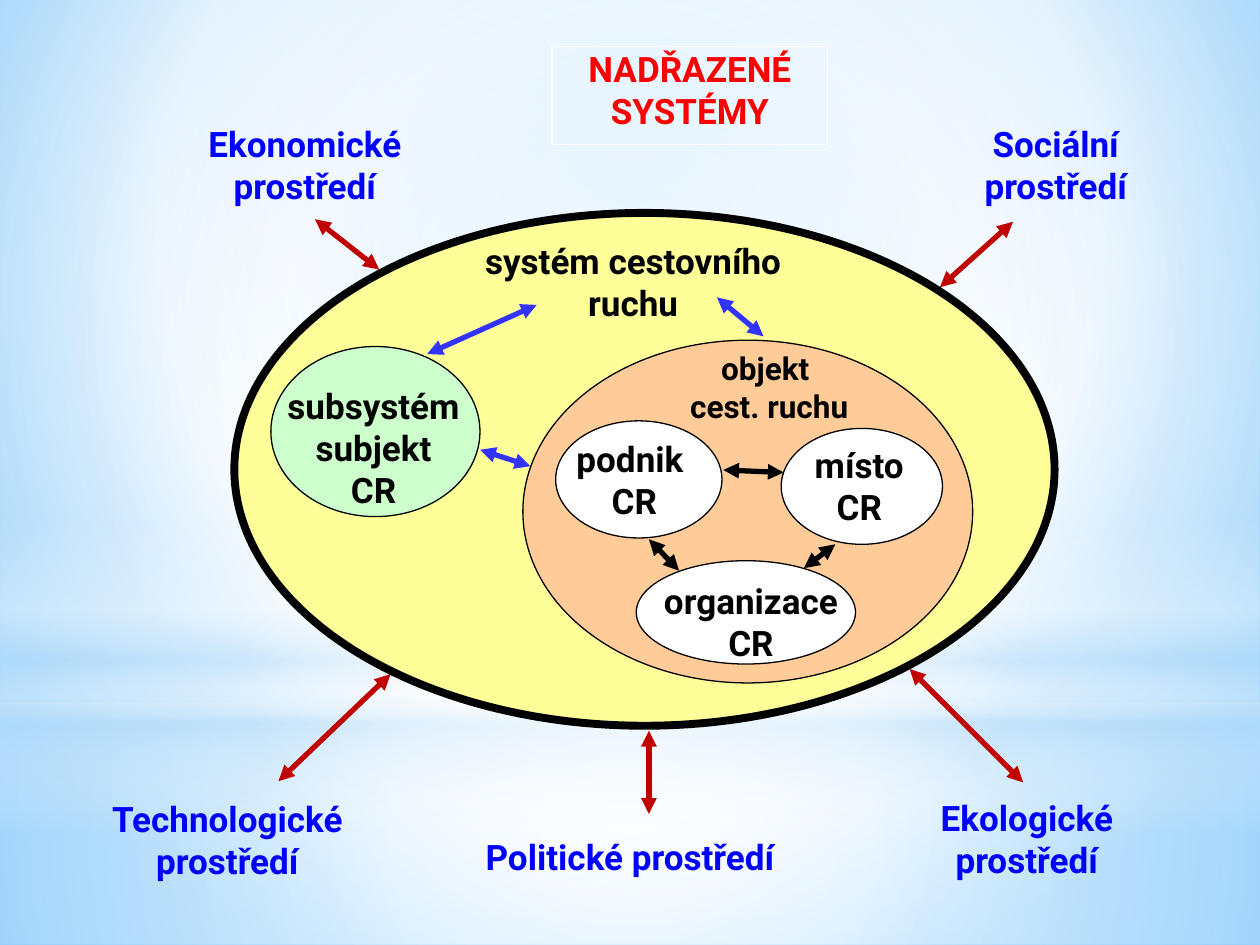
from lxml import etree
from pptx import Presentation, util as u
from pptx.dml.color import RGBColor
from pptx.enum import shapes, text
from pptx.oxml import parse_xml
from pptx.oxml.ns import nsdecls, qn

THEME = {
    "font": "Roboto", "big": 20, "small": 18,
    "title": "FF0000", "env": "0000FF", "ink": "000000", "white": "FFFFFF",
    "outer": "C00000", "inner": "3333FF", "haze": "B4DCFA",
    "system": "FFFF99", "subject": "CCFFCC", "object": "FFCC99",
    "sky": "9ED5FF", "deep": "5BB9FF",
}
RECT, OVAL = shapes.MSO_SHAPE.RECTANGLE, shapes.MSO_SHAPE.OVAL
MID = (50, 50, 50, 50)

# gradient stops: position %, colour, opacity %; then focus rectangle or angle
SKY = ([(0, "sky", 100), (60, "white", 100), (100, "deep", 100)], (20, 10, 20, 60))
LAYERS = [
    (RECT, (0, 5.58, 10, 1.92),
     [(0, "white", 91), (37, "white", 76), (100, "haze", 79)], MID),
    (RECT, (0, 0, 10, 5.58),
     [(0, "white", 89), (48, "white", 62), (100, "haze", 79)], MID),
    (RECT, (0, 4.12, 10, 2.5),
     [(0, "white", 0), (29, "white", 30), (45, "haze", 40),
      (55, "white", 26), (65, "haze", 60), (100, "white", 0)], 90),
    (OVAL, (0, 1.75, 10, 5.58), [(0, "white", 100), (56, "white", 0)], MID),
]

# text, box, insets, colour, size
TITLE = ("NADŘAZENÉ SYSTÉMY", (4.38, 0.37, 2.19, 0.78), (0, 0.01), "title", "big")
LABELS = [
    ("Technologické prostředí", (0.58, 6.28, 2.45, 0.78), (0.1, 0.05), "env", "big"),
    ("Politické prostředí", (3.59, 6.55, 2.82, 0.48), (0, 0.08), "env", "big"),
    ("Ekologické prostředí", (7.13, 6.27, 2.04, 0.78), (0.1, 0.05), "env", "big"),
    ("Sociální prostředí", (7.46, 0.97, 1.84, 0.75), (0, 0), "env", "big"),
    ("Ekonomické prostředí", (1.36, 0.97, 2.12, 0.72), (0, 0), "env", "big"),
    ("systém cestovního ruchu", (3.7, 1.84, 2.65, 0.76), (0, 0.06), "ink", "big"),
    ("subsystém subjekt\nCR", (2.16, 3.04, 1.61, 0.98), (0, 0.01), "ink", "big"),
    ("místo\nCR", (6.32, 3.51, 1, 0.52), (0.02, 0.01), "ink", "big"),
    ("podnik\n CR", (4.41, 3.47, 1.18, 0.51), (0.1, 0), "ink", "big"),
    ("objekt \ncest. ruchu", (5.32, 2.77, 1.57, 0.57), (0, 0), "ink", "small"),
    ("organizace CR", (5.15, 4.55, 1.62, 0.67), (0.02, 0.05), "ink", "big"),
]

# box, fill, line width
SYSTEM = [((1.86, 1.69, 6.51, 4.07), "system", 4.5)]
PARTS = [
    ((2.15, 2.75, 1.66, 1.35), "subject", 0.75),
    ((4.15, 2.7, 3.57, 2.72), "object", 0.75),
    ((4.41, 3.34, 1.32, 0.93), "white", 0.75),
    ((6.2, 3.4, 1.28, 0.92), "white", 0.75),
    ((5.05, 4.45, 1.74, 0.82), "white", 0.75),
]

# x1, y1, x2, y2 by colour
ARROWS = {
    "outer": [(3.1, 5.35, 2.21, 6.2), (5.15, 5.8, 5.15, 6.46),
              (7.22, 5.31, 8.12, 6.21), (2.5, 1.74, 3.01, 2.14),
              (8.04, 1.76, 7.46, 2.28)],
    "inner": [(3.81, 3.57, 4.21, 3.7), (3.39, 2.81, 4.26, 2.42),
              (5.69, 2.36, 6.06, 2.67)],
    "ink": [(5.15, 4.28, 5.39, 4.53), (6.63, 4.32, 6.38, 4.51),
            (5.74, 3.73, 6.22, 3.75)],
}


def rgb(name):
    return RGBColor.from_string(THEME[name])


def inch(vals):
    return [u.Inches(v) for v in vals]


def blend(fmt, stops, aim):
    """Swap the solid fill in fmt for a gradient; aim is an angle or a focus."""
    gs = "".join(
        f'<a:gs pos="{pos * 1000}"><a:srgbClr val="{THEME[tone]}">'
        f'<a:alpha val="{dim * 1000}"/></a:srgbClr></a:gs>'
        for pos, tone, dim in stops)
    if isinstance(aim, tuple):
        rect = " ".join(f'{k}="{v * 1000}"' for k, v in zip("ltrb", aim))
        kind = f'<a:path path="circle"><a:fillToRect {rect}/></a:path>'
    else:
        kind = f'<a:lin ang="{aim * 60000}" scaled="0"/>'
    old = fmt.find(qn("a:solidFill"))
    fmt.replace(old, parse_xml(
        f'<a:gradFill {nsdecls("a")} rotWithShape="1">'
        f'<a:gsLst>{gs}</a:gsLst>{kind}</a:gradFill>'))


def block(kind, box, tone="white"):
    shp = slide.shapes.add_shape(kind, *inch(box))
    shp.shadow.inherit = False
    shp.fill.solid()
    shp.fill.fore_color.rgb = rgb(tone)
    shp.line.fill.background()
    return shp


def edge(line, tone, width):
    line.color.rgb = rgb(tone)
    line.width = u.Pt(width)


def write(shp, words, pads, tone, size):
    frame = shp.text_frame
    dx, dy = inch(pads)
    form = {"word_wrap": True, "vertical_anchor": text.MSO_ANCHOR.TOP,
            "margin_left": dx, "margin_right": dx,
            "margin_top": dy, "margin_bottom": dy}
    for key, val in form.items():
        setattr(frame, key, val)
    frame.text = words
    for para in frame.paragraphs:
        para.alignment = text.PP_ALIGN.CENTER
        font = para.runs[0].font
        look = {"name": THEME["font"], "size": u.Pt(THEME[size]), "bold": True}
        for key, val in look.items():
            setattr(font, key, val)
        font.color.rgb = rgb(tone)


def ovals(rows):
    for box, tone, width in rows:
        edge(block(OVAL, box, tone).line, "ink", width)


def arrows(tone):
    for ends in ARROWS[tone]:
        link = slide.shapes.add_connector(shapes.MSO_CONNECTOR.STRAIGHT, *inch(ends))
        edge(link.line, tone, 3)
        props = link._element.spPr
        for tip in ("a:headEnd", "a:tailEnd"):
            etree.SubElement(props.find(qn("a:ln")), qn(tip), type="triangle")
        etree.SubElement(props, qn("a:effectLst"))


deck = Presentation()
deck.slide_width, deck.slide_height = inch((10, 7.5))
slide = deck.slides.add_slide(deck.slide_layouts[6])

back = slide.background.fill
back.solid()
back.fore_color.rgb = rgb("white")
blend(slide._element.cSld.find(qn("p:bg")).find(qn("p:bgPr")), *SKY)
for kind, box, stops, aim in LAYERS:
    blend(block(kind, box)._element.spPr, stops, aim)

words, box, *style = TITLE
head = block(RECT, box)
head.fill.background()
edge(head.line, "white", 0.75)
write(head, words, *style)

arrows("outer")
ovals(SYSTEM)
arrows("inner")
ovals(PARTS)
arrows("ink")
for words, box, *style in LABELS:
    write(slide.shapes.add_textbox(*inch(box)), words, *style)

deck.save("out.pptx")
